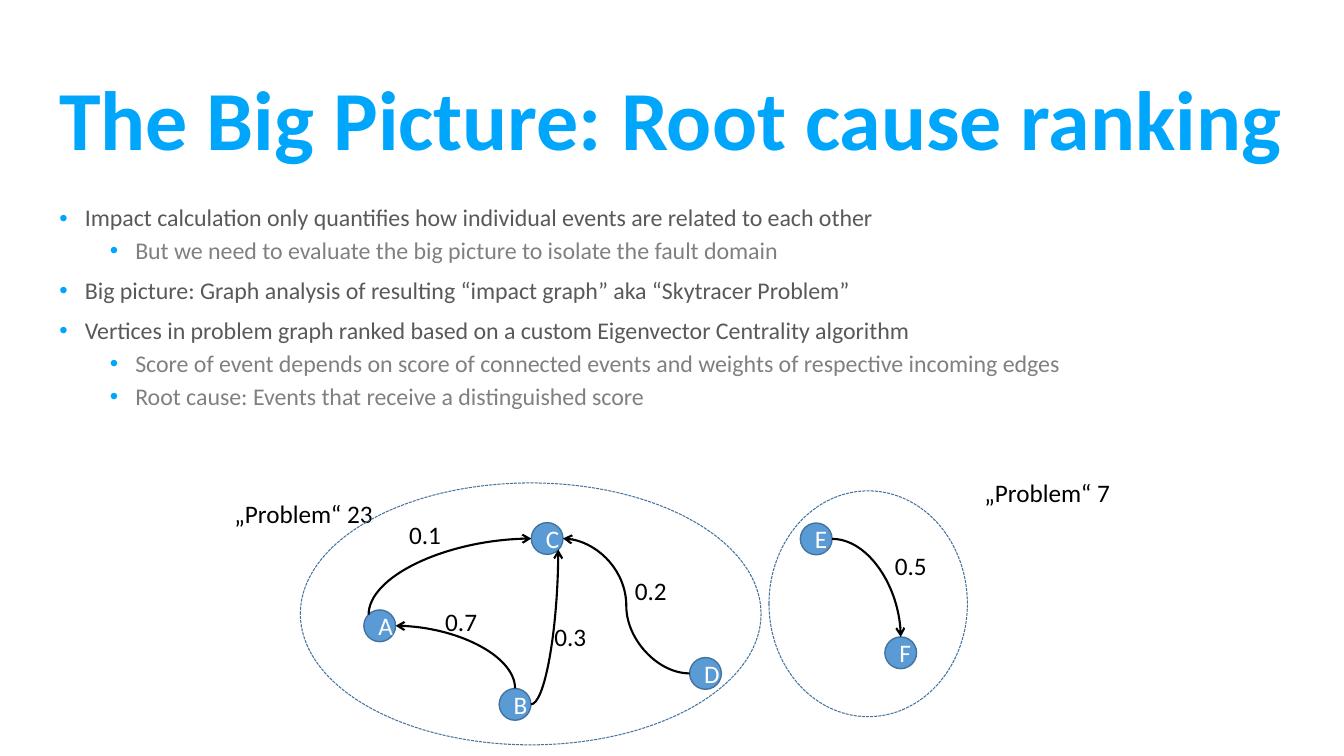
from lxml import etree
from pptx import Presentation
from pptx.dml.color import RGBColor
from pptx.enum.dml import MSO_LINE
from pptx.enum.shapes import MSO_CONNECTOR, MSO_SHAPE
from pptx.enum.text import MSO_ANCHOR, PP_ALIGN
from pptx.oxml.ns import qn
from pptx.util import Cm, Pt

CURVE = MSO_CONNECTOR.CURVE
OVAL = MSO_SHAPE.OVAL
DASH = MSO_LINE.SQUARE_DOT
MIDDLE = MSO_ANCHOR.MIDDLE
CENTER = PP_ALIGN.CENTER
FONT = "Calibri"
BLUE, NODE_FILL, OUTLINE = "00A6FC", "5B9BD5", "43739E"
NODE_SIZE = 0.8
SITES = {
    "top": (0.5, 0), "left": (0, 0.5), "right": (1, 0.5),
    "top left": (0.15, 0.15), "bottom right": (0.85, 0.85),
}

BULLETS = [
    (0, "Impact calculation only quantifies how individual events are related to each other"),
    (1, "But we need to evaluate the big picture to isolate the fault domain"),
    (0, "Big picture: Graph analysis of resulting “impact graph” aka “Skytracer Problem”"),
    (0, "Vertices in problem graph ranked based on a custom Eigenvector Centrality algorithm"),
    (1, "Score of event depends on score of connected events and weights of respective incoming edges"),
    (1, "Root cause: Events that receive a distinguished score"),
]

PROBLEM_23 = {
    "title": ("„Problem“ 23", -1.91, 0.25),
    "nodes": {"A": (1.6, 3.2), "C": (5.82, 1), "D": (9.81, 4.4), "B": (5.01, 5.18)},
    "edges": [
        ("B", "top", "A", "right", "up"),
        ("A", "top left", "C", "left", "up"),
        ("B", "right", "C", "bottom right", "across"),
        ("D", "left", "C", "right", "double"),
    ],
    "weights": [("0.1", 2.49, 0.78), ("0.3", 6.15, 3.37), ("0.2", 8.18, 2.21), ("0.7", 3.4, 2.99)],
}
PROBLEM_7 = {
    "title": ("„Problem“ 7", 5.18, -0.46),
    "nodes": {"E": (0.79, 0.81), "F": (2.92, 3.68)},
    "edges": [("E", "right", "F", "top", "across")],
    "weights": [("0.5", 2.92, 1.37)],
}


def color(hex_string):
    return RGBColor.from_string(hex_string)


def style_text(para, size, hex_string, bold=False):
    for span in para.runs:
        span.font.name = FONT
        span.font.size = Pt(size)
        span.font.bold = bold
        span.font.color.rgb = color(hex_string)


def add_text(page, text, left, top, width, height, size, hex_string, bold=False):
    box = page.shapes.add_textbox(Cm(left), Cm(top), Cm(width), Cm(height))
    box.text_frame.word_wrap = True
    box.text_frame.text = text
    style_text(box.text_frame.paragraphs[0], size, hex_string, bold)
    return box


def add_title(page, left, top, width, height):
    box = add_text(page, "The Big Picture: Root cause ranking", left, top, width, height, 60, BLUE, True)
    frame = box.text_frame
    frame.margin_left = frame.margin_right = Cm(1.49)
    frame.vertical_anchor = MIDDLE
    frame.paragraphs[0].line_spacing = 0.9


def add_bullet(para, level):
    props = para._p.get_or_add_pPr()
    props.set("marL", str(Cm(0.64 + 1.27 * level)))
    props.set("indent", str(-Cm(0.64)))
    bullet_color = etree.SubElement(props, qn("a:buClr"))
    etree.SubElement(bullet_color, qn("a:srgbClr"), val=BLUE)
    etree.SubElement(props, qn("a:buFont"), typeface="Arial")
    etree.SubElement(props, qn("a:buChar"), char="•")


def add_body(page, left, top, width, height):
    box = page.shapes.add_textbox(Cm(left), Cm(top), Cm(width), Cm(height))
    frame = box.text_frame
    frame.word_wrap = True
    frame.margin_left = frame.margin_right = Cm(1.5)
    frame.margin_top = frame.margin_bottom = 0
    frame.text = "\n".join(text for level, text in BULLETS)
    for index, (para, (level, text)) in enumerate(zip(frame.paragraphs, BULLETS)):
        add_bullet(para, level)
        para.level = level
        para.line_spacing = 0.9
        if index:
            para.space_before = Pt(5 if level else 10)
        style_text(para, 17.1, "808080" if level else "595959")


def add_oval(page, left, top, width, height, line_width):
    oval = page.shapes.add_shape(OVAL, Cm(left), Cm(top), Cm(width), Cm(height))
    oval.shadow.inherit = False
    oval.line.color.rgb = color(OUTLINE)
    oval.line.width = Pt(line_width)
    return oval


def add_node(page, name, left, top):
    node = add_oval(page, left, top, NODE_SIZE, NODE_SIZE, 1)
    node.fill.solid()
    node.fill.fore_color.rgb = color(NODE_FILL)
    node.text_frame.text = name
    node.text_frame.vertical_anchor = MIDDLE
    para = node.text_frame.paragraphs[0]
    para.alignment = CENTER
    style_text(para, 18, "FFFFFF")


def add_edge(page, start, end, bend):
    (x1, y1), (x2, y2) = start, end
    if bend == "up":
        middle_x, middle_y = (x1 + x2) / 2, (y1 + y2) / 2
        half_width, half_height = (y1 - y2) / 2, (x2 - x1) / 2
        x1, x2 = middle_x - half_width, middle_x + half_width
        y1, y2 = middle_y - half_height, middle_y + half_height
    edge = page.shapes.add_connector(CURVE, Cm(x1), Cm(y1), Cm(x2), Cm(y2))
    edge.line.color.rgb = color("000000")
    edge.line.width = Pt(1.5)
    props = edge._element.spPr
    if bend == "up":
        props.find(qn("a:xfrm")).set("rot", str(270 * 60000))
    if bend != "double":
        props.find(qn("a:prstGeom")).set("prst", "curvedConnector2")
    etree.SubElement(props.find(qn("a:ln")), qn("a:tailEnd"), type="arrow")
    etree.SubElement(props, qn("a:effectLst"))


def add_problem(page, problem, left, top, width, height):
    nodes = {name: (left + x, top + y) for name, (x, y) in problem["nodes"].items()}

    def site(name, side):
        return tuple(place + NODE_SIZE * part for place, part in zip(nodes[name], SITES[side]))

    for name, (x, y) in nodes.items():
        add_node(page, name, x, y)
    for source, source_side, target, target_side, bend in problem["edges"]:
        add_edge(page, site(source, source_side), site(target, target_side), bend)
    for weight, x, y in problem["weights"]:
        add_text(page, weight, left + x, top + y, 1.32, 1.02, 18, "000000")
    title, x, y = problem["title"]
    add_text(page, title, left + x, top + y, 4.19, 1.02, 18, "000000")
    outline = add_oval(page, left, top, width, height, 0.75)
    outline.fill.background()
    outline.line.dash_style = DASH


def main():
    deck = Presentation()
    deck.slide_width, deck.slide_height = Cm(33.87), Cm(19.05)
    page = deck.slides.add_slide(deck.slide_layouts[6])
    add_title(page, 0, 1.37, 33.87, 3.45)
    add_body(page, 0, 5.2, 33.87, 5.74)
    add_problem(page, PROBLEM_7, 19.38, 12.37, 5, 5.69)
    add_problem(page, PROBLEM_23, 7.57, 12.17, 11.61, 6.6)
    deck.save("out.pptx")


if __name__ == "__main__":
    main()
